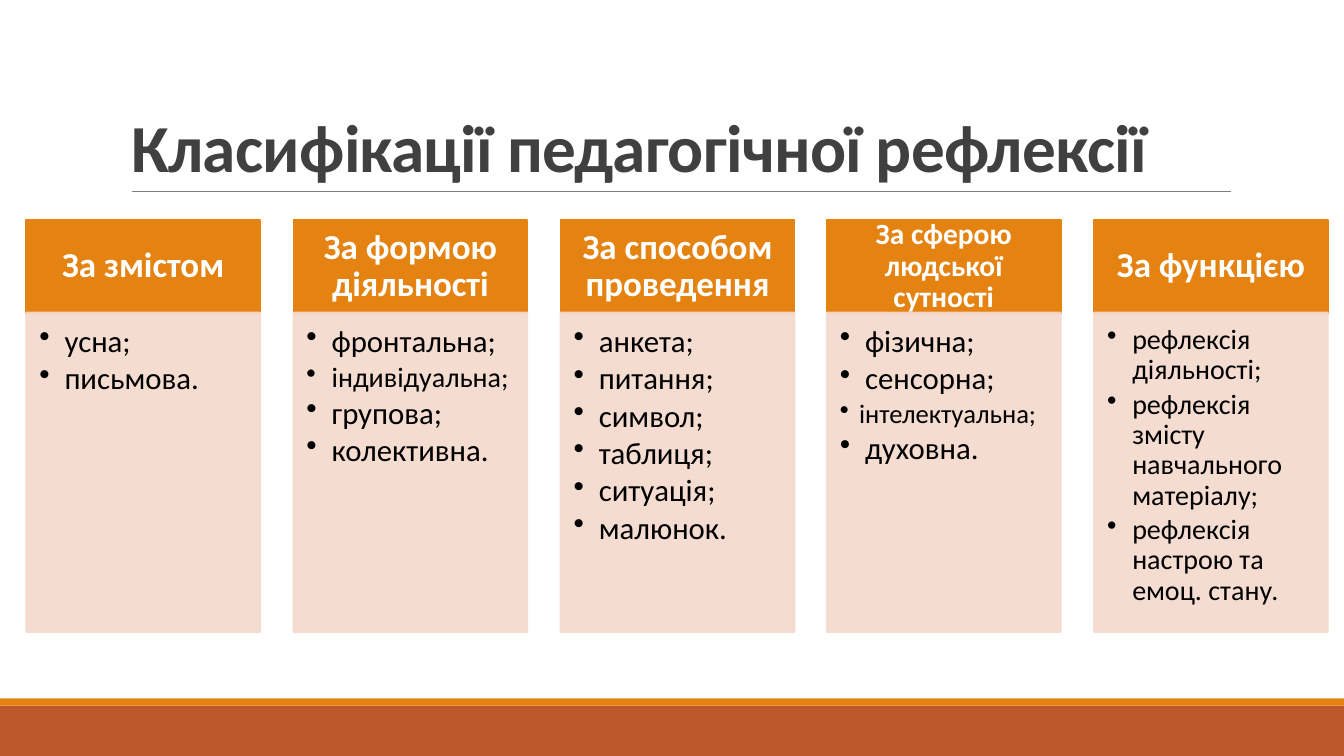
from lxml import etree
from pptx import Presentation
from pptx.dml.color import RGBColor
from pptx.enum.shapes import MSO_CONNECTOR, MSO_SHAPE
from pptx.enum.text import MSO_ANCHOR, MSO_AUTO_SIZE, PP_ALIGN
from pptx.oxml.ns import qn
from pptx.util import Emu, Pt

RECTANGLE = MSO_SHAPE.RECTANGLE
STRAIGHT = MSO_CONNECTOR.STRAIGHT
TOP, MIDDLE, BOTTOM = MSO_ANCHOR.TOP, MSO_ANCHOR.MIDDLE, MSO_ANCHOR.BOTTOM
LEFT, CENTER = PP_ALIGN.LEFT, PP_ALIGN.CENTER
NO_AUTOFIT = MSO_AUTO_SIZE.NONE

EMU_PER_PX = 9144  # 100 px to the inch
FONT = "Calibri"
COLORS = {
    "orange": "E48312",
    "brown": "BD582C",
    "peach": "F5D9CC",
    "gray": "808080",
    "title": "404040",
    "white": "FFFFFF",
    "black": "000000",
}

# Columns: evenly spaced, a heading above a list
FIRST_LEFT, LAST_LEFT, COLUMN_WIDTH = 26, 1085, 232
HEADING_TOP, HEADING_HEIGHT = 218, 93
LIST_TOP, LIST_HEIGHT = 310, 317
HEADING_INSETS = (19, 11, 19, 11)
SMALL_HEADING_INSETS = (16, 9, 16, 9)
LIST_INSETS = (13, 13, 17, 19)
BULLET_INDENT, SMALL_BULLET_INDENT = 25, 19

# Heading, heading size, items, item size
COLUMNS = [
    ("За змістом", 25, ["усна;", "письмова."], 22),
    ("За формою діяльності", 25,
     ["фронтальна;", "індивідуальна;", "групова;", "колективна."], 22),
    ("За способом проведення", 25,
     ["анкета;", "питання;", "символ;", "таблиця;", "ситуація;", "малюнок."], 22),
    ("За сферою людської сутності", 21,
     ["фізична;", "сенсорна;", "інтелектуальна;", "духовна."], 22),
    ("За функцією", 25,
     ["рефлексія діяльності;", "рефлексія змісту навчального матеріалу;",
      "рефлексія настрою та емоц. стану."], 20),
]
# Long words set smaller: size and bullet indent
LONG_ITEMS = {
    "індивідуальна;": (20, BULLET_INDENT),
    "інтелектуальна;": (19, SMALL_BULLET_INDENT),
}


def px(length):
    return Emu(length * EMU_PER_PX)


def color(name):
    return RGBColor.from_string(COLORS[name])


def set_attributes(target, values):
    for name, value in values.items():
        setattr(target, name, value)


def set_frame(shape, anchor, insets):
    left, top, right, bottom = insets
    set_attributes(shape.text_frame, {
        "word_wrap": True, "auto_size": NO_AUTOFIT, "vertical_anchor": anchor,
        "margin_left": px(left), "margin_top": px(top),
        "margin_right": px(right), "margin_bottom": px(bottom),
    })


def write(paragraph, text, size, color_name, bold=False, **paragraph_format):
    set_attributes(paragraph, {"space_before": Pt(0), **paragraph_format})
    run = paragraph.add_run()
    run.text = text
    set_attributes(run.font, {"name": FONT, "size": Pt(size), "bold": bold})
    run.font.color.rgb = color(color_name)
    return run


def add_bullet(paragraph, indent):
    properties = paragraph._p.get_or_add_pPr()
    properties.set("marL", str(px(indent)))
    properties.set("indent", str(-px(indent)))
    etree.SubElement(properties, qn("a:buChar")).set("char", "•")


def add_box(slide, box, fill, outlined=True, opacity=100):
    shape = slide.shapes.add_shape(RECTANGLE, *map(px, box))
    shape.shadow.inherit = False
    formats = [shape.fill]
    if outlined:
        shape.line.width = Pt(1.25)
        formats.append(shape.line.fill)
    else:
        shape.line.fill.background()
    for fill_format in formats:
        fill_format.solid()
        fill_format.fore_color.rgb = color(fill)
    if opacity < 100:
        for color_element in shape._element.spPr.iter(qn("a:srgbClr")):
            etree.SubElement(color_element, qn("a:alpha")).set("val", str(opacity * 1000))
    return shape


def add_title(slide, text):
    title = slide.shapes.title
    set_attributes(title, {"left": px(120), "top": px(31),
                           "width": px(1064), "height": px(159)})
    set_frame(title, BOTTOM, (10, 5, 10, 5))
    run = write(title.text_frame.paragraphs[0], text, 48, "title", bold=True,
                alignment=LEFT, line_spacing=0.85)
    run._r.get_or_add_rPr().set("spc", "-50")


def add_rule(slide):
    rule = slide.shapes.add_connector(STRAIGHT, px(131), px(190), px(1221), px(190))
    rule.line.color.rgb = color("gray")
    rule.line.width = Pt(0.5)
    etree.SubElement(rule._element.spPr, qn("a:effectLst"))


def add_heading(slide, left, text, size):
    box = (left, HEADING_TOP, COLUMN_WIDTH, HEADING_HEIGHT)
    shape = add_box(slide, box, "orange")
    set_frame(shape, MIDDLE, HEADING_INSETS if size == 25 else SMALL_HEADING_INSETS)
    write(shape.text_frame.paragraphs[0], text, size, "white", bold=True,
          alignment=CENTER, line_spacing=0.9)


def add_list(slide, left, items, size):
    box = (left, LIST_TOP, COLUMN_WIDTH, LIST_HEIGHT)
    shape = add_box(slide, box, "peach", opacity=90)
    set_frame(shape, TOP, LIST_INSETS)
    frame = shape.text_frame
    for index, item in enumerate(items):
        paragraph = frame.add_paragraph() if index else frame.paragraphs[0]
        item_size, indent = LONG_ITEMS.get(item, (size, BULLET_INDENT))
        add_bullet(paragraph, indent)
        write(paragraph, item, item_size, "black",
              alignment=LEFT, line_spacing=0.9, space_after=Pt(3))


def main():
    presentation = Presentation()
    presentation.slide_width = px(1333)
    presentation.slide_height = px(750)
    slide = presentation.slides.add_slide(presentation.slide_layouts[5])

    # Footer bands
    add_box(slide, (0, 700, 1333, 50), "brown", outlined=False)
    add_box(slide, (0, 693, 1333, 7), "orange", outlined=False)

    # Title with its rule
    add_rule(slide)
    add_title(slide, "Класифікації педагогічної рефлексії")

    # Classification columns
    step = (LAST_LEFT - FIRST_LEFT) / (len(COLUMNS) - 1)
    for index, (heading, heading_size, items, item_size) in enumerate(COLUMNS):
        left = round(FIRST_LEFT + index * step)
        add_heading(slide, left, heading, heading_size)
        add_list(slide, left, items, item_size)

    presentation.save("out.pptx")


if __name__ == "__main__":
    main()
